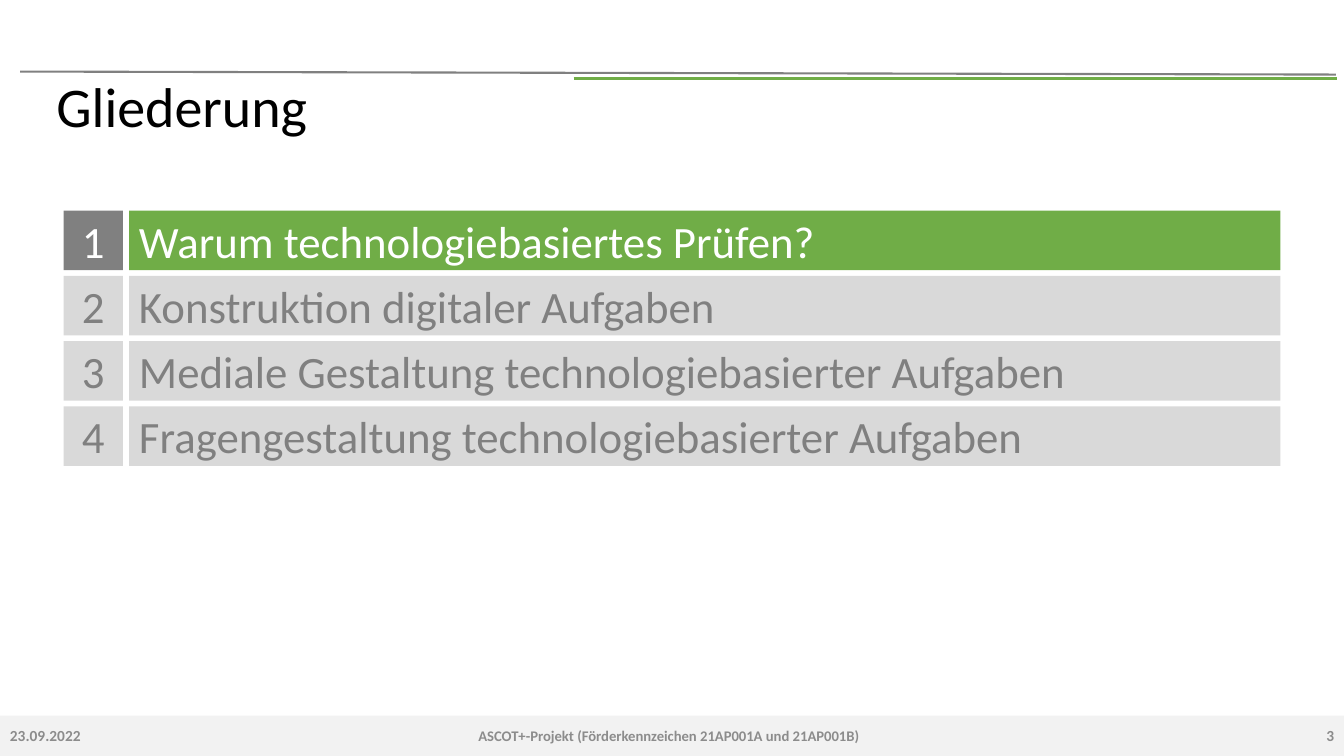
"""Build the agenda slide "Gliederung" with its highlighted first entry."""
import dataclasses
import typing

import pptx
import pptx.dml.color
import pptx.enum.shapes
import pptx.enum.text
import pptx.oxml.ns
import pptx.util
import lxml.etree

Inches = pptx.util.Inches
ALIGN = pptx.enum.text.PP_ALIGN
ANCHOR = pptx.enum.text.MSO_ANCHOR


@dataclasses.dataclass(frozen=True)
class Theme:
    font: str = "Calibri"
    black: str = "000000"
    white: str = "FFFFFF"
    green: str = "70AD47"
    gray: str = "808080"
    light: str = "D9D9D9"
    band: str = "F2F2F2"
    muted: str = "8C8C8C"
    title_size: float = 40
    item_size: float = 32
    footer_size: float = 10.5
    edge_size: float = 11


@dataclasses.dataclass(frozen=True)
class Box:
    left: float
    top: float
    width: float
    height: float

    def emu(self) -> list[int]:
        return [Inches(v) for v in dataclasses.astuple(self)]


@dataclasses.dataclass(frozen=True)
class Footer:
    text: str
    left: float
    width: float
    size: float
    align: typing.Any


@dataclasses.dataclass(frozen=True)
class Rule:
    start: tuple[float, float]
    end: tuple[float, float]
    color: str
    width: float


THEME = Theme()
ITEMS = [
    "Warum technologiebasiertes Prüfen?",
    "Konstruktion digitaler Aufgaben",
    "Mediale Gestaltung technologiebasierter Aufgaben",
    "Fragengestaltung technologiebasierter Aufgaben",
]
ACTIVE = 1
NUMBER_LEFT, ITEM_LEFT, ITEM_WIDTH = 0.63, 1.28, 11.42
ITEM_TOP, ITEM_HEIGHT, ITEM_PITCH = 2.09, 0.59, 0.647
FOOTER_TOP, FOOTER_HEIGHT = 7.1, 0.4
RULES = [
    Rule((0.2, 0.71), (13.25, 0.74), THEME.gray, 1.5),
    Rule((5.69, 0.78), (13.26, 0.78), THEME.green, 2.25),
]
FOOTERS = [
    Footer("23.09.2022", 0, 1.7, THEME.edge_size, ALIGN.LEFT),
    Footer("ASCOT+-Projekt (Förderkennzeichen 21AP001A und 21AP001B)",
           1.7, 9.87, THEME.footer_size, ALIGN.CENTER),
    Footer("3", 11.69, 1.64, THEME.edge_size, ALIGN.RIGHT),
]


def rgb(color: str) -> pptx.dml.color.RGBColor:
    return pptx.dml.color.RGBColor.from_string(color)


def set_text(sp, text: str, size: float, color: str,
             align=ALIGN.LEFT, bold: bool = False) -> None:
    tf = sp.text_frame
    frame = {"word_wrap": True, "vertical_anchor": ANCHOR.MIDDLE,
             "auto_size": pptx.enum.text.MSO_AUTO_SIZE.NONE}
    for name, value in frame.items():
        setattr(tf, name, value)
    p = tf.paragraphs[0]
    p.alignment = align
    r = p.add_run()
    r.text = text
    font = {"name": THEME.font, "size": pptx.util.Pt(size), "bold": bold}
    for name, value in font.items():
        setattr(r.font, name, value)
    r.font.color.rgb = rgb(color)


def add_rect(s, box: Box, fill: str):
    sp = s.shapes.add_shape(pptx.enum.shapes.MSO_SHAPE.RECTANGLE, *box.emu())
    sp.shadow.inherit = False
    sp.fill.solid()
    sp.fill.fore_color.rgb = rgb(fill)
    sp.line.fill.background()
    return sp


def add_rule(s, rule: Rule) -> None:
    ends = [Inches(v) for v in rule.start + rule.end]
    line = s.shapes.add_connector(pptx.enum.shapes.MSO_CONNECTOR.STRAIGHT, *ends)
    line.line.color.rgb = rgb(rule.color)
    line.line.width = pptx.util.Pt(rule.width)
    lxml.etree.SubElement(line._element.spPr, pptx.oxml.ns.qn("a:effectLst"))


def add_footer(s, footer: Footer) -> None:
    box = Box(footer.left, FOOTER_TOP, footer.width, FOOTER_HEIGHT)
    sp = s.shapes.add_textbox(*box.emu())
    set_text(sp, footer.text, footer.size, THEME.muted, footer.align, bold=True)


def add_item(s, number: int, text: str) -> None:
    active = number == ACTIVE
    top = ITEM_TOP + (number - 1) * ITEM_PITCH
    color = THEME.white if active else THEME.gray
    sp = add_rect(s, Box(NUMBER_LEFT, top, ITEM_HEIGHT, ITEM_HEIGHT),
                  THEME.gray if active else THEME.light)
    set_text(sp, str(number), THEME.item_size, color, ALIGN.CENTER)
    sp = add_rect(s, Box(ITEM_LEFT, top, ITEM_WIDTH, ITEM_HEIGHT),
                  THEME.green if active else THEME.light)
    set_text(sp, text, THEME.item_size, color)


def add_title(s, text: str) -> None:
    sp = s.shapes.title
    sp.left, sp.top, sp.width, sp.height = Box(0.46, 0.79, 12.2, 0.59).emu()
    set_text(sp, text, THEME.title_size, THEME.black)
    sp.text_frame.paragraphs[0].line_spacing = 0.9


def main() -> None:
    prs = pptx.Presentation()
    prs.slide_width, prs.slide_height = Inches(13.33), Inches(7.5)
    s = prs.slides.add_slide(prs.slide_layouts[5])
    add_rect(s, Box(0, FOOTER_TOP, 13.33, FOOTER_HEIGHT), THEME.band)
    for rule in RULES:
        add_rule(s, rule)
    for footer in FOOTERS:
        add_footer(s, footer)
    for number, text in enumerate(ITEMS, start=1):
        add_item(s, number, text)
    add_title(s, "Gliederung")
    prs.save("out.pptx")


if __name__ == "__main__":
    main()
